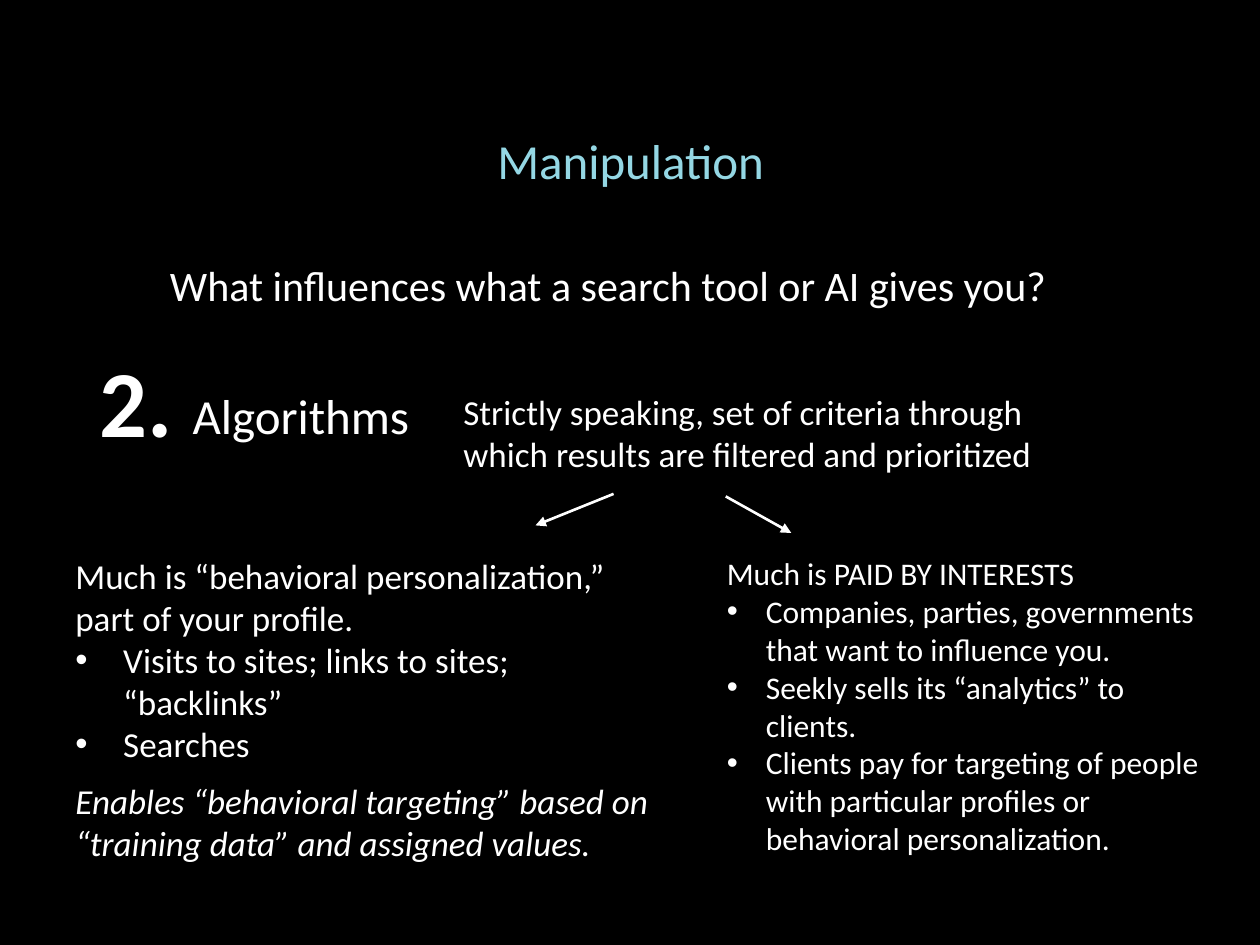
from dataclasses import dataclass

from lxml import etree
from pptx import Presentation
from pptx.dml.color import RGBColor
from pptx.enum.shapes import MSO_CONNECTOR
from pptx.enum.text import PP_ALIGN
from pptx.oxml.ns import qn
from pptx.util import Inches, Pt

LEFT, CENTER = PP_ALIGN.LEFT, PP_ALIGN.CENTER
STRAIGHT = MSO_CONNECTOR.STRAIGHT
FONT = "Calibri"
BLACK, WHITE, AQUA = "000000", "FFFFFF", "94D7E4"


@dataclass
class Box:
    left: float
    top: float
    width: float
    height: float


@dataclass
class Arrow:
    start: tuple[float, float]
    end: tuple[float, float]


def color(code: str) -> RGBColor:
    return RGBColor.from_string(code)


def add_bullet(para, indent: float) -> None:
    props = para._p.get_or_add_pPr()
    props.set("marL", str(Inches(indent)))
    props.set("indent", str(-Inches(indent)))
    etree.SubElement(props, qn("a:buFont"), typeface="Arial")
    etree.SubElement(props, qn("a:buChar"), char="•")


def add_text(slide, box: Box, text: str, *, size: int, bullets: tuple = (),
             indent: float = 0, fill: str = WHITE, bold: bool = False,
             italic: bool = False, align=LEFT, spacing: float = 1.0,
             wrap: bool = True) -> None:
    """Add a lead paragraph, followed by any bulleted ones."""
    shape = slide.shapes.add_textbox(Inches(box.left), Inches(box.top),
                                     Inches(box.width), Inches(box.height))
    frame = shape.text_frame
    frame.word_wrap = wrap
    for i, line in enumerate((text, *bullets)):
        para = frame.add_paragraph() if i else frame.paragraphs[0]
        para.alignment = align
        para.line_spacing = spacing
        if i:
            add_bullet(para, indent)
        run = para.add_run()
        run.text = line
        font = run.font
        font.name, font.size = FONT, Pt(size)
        font.bold, font.italic = bold, italic
        font.color.rgb = color(fill)


def add_arrow(slide, arrow: Arrow) -> None:
    ends = [Inches(value) for value in (*arrow.start, *arrow.end)]
    shape = slide.shapes.add_connector(STRAIGHT, *ends)
    shape.line.color.rgb = color(WHITE)
    shape.line.width = Pt(1.5)
    etree.SubElement(shape.line._get_or_add_ln(), qn("a:tailEnd"), type="triangle")
    etree.SubElement(shape._element.spPr, qn("a:effectLst"))


def main() -> None:
    deck = Presentation()
    deck.slide_width, deck.slide_height = Inches(10), Inches(7.5)
    slide = deck.slides.add_slide(deck.slide_layouts[6])
    back = slide.background.fill
    back.solid()
    back.fore_color.rgb = color(BLACK)

    add_text(slide, Box(1.25, 2.01, 7.25, 0.5),
             "What influences what a search tool or AI gives you?",
             size=24, wrap=False)
    add_text(slide, Box(1.43, 3.01, 2.01, 0.57), "Algorithms", size=28, wrap=False)
    add_text(slide, Box(0.9, 0.75, 8.21, 0.73), "Manipulation",
             size=28, fill=AQUA, align=CENTER, spacing=1.5)
    add_text(slide, Box(0.68, 2.67, 0.8, 1.01), "2.",
             size=54, bold=True, align=CENTER, wrap=False)
    add_text(slide, Box(3.58, 3.05, 5.33, 0.77),
             "Strictly speaking, set of criteria through which results are "
             "filtered and prioritized", size=20)
    add_text(slide, Box(0.5, 4.35, 4.67, 1.78),
             "Much is “behavioral personalization,” part of your profile.",
             size=20, indent=0.38,
             bullets=("Visits to sites; links to sites; “backlinks”", "Searches"))
    add_text(slide, Box(5.67, 4.35, 4.08, 2.52), "Much is PAID BY INTERESTS",
             size=18, indent=0.31,
             bullets=("Companies, parties, governments that want to influence you.",
                      "Seekly sells its “analytics” to clients.",
                      "Clients pay for targeting of people with particular "
                      "profiles or behavioral personalization."))
    add_text(slide, Box(0.5, 6.14, 5, 0.77),
             "Enables “behavioral targeting” based on “training data” and "
             "assigned values.", size=20, italic=True)

    for arrow in (Arrow((4.87, 3.92), (4.25, 4.17)),
                  Arrow((5.76, 3.94), (6.28, 4.23))):
        add_arrow(slide, arrow)

    deck.save("out.pptx")


if __name__ == "__main__":
    main()
